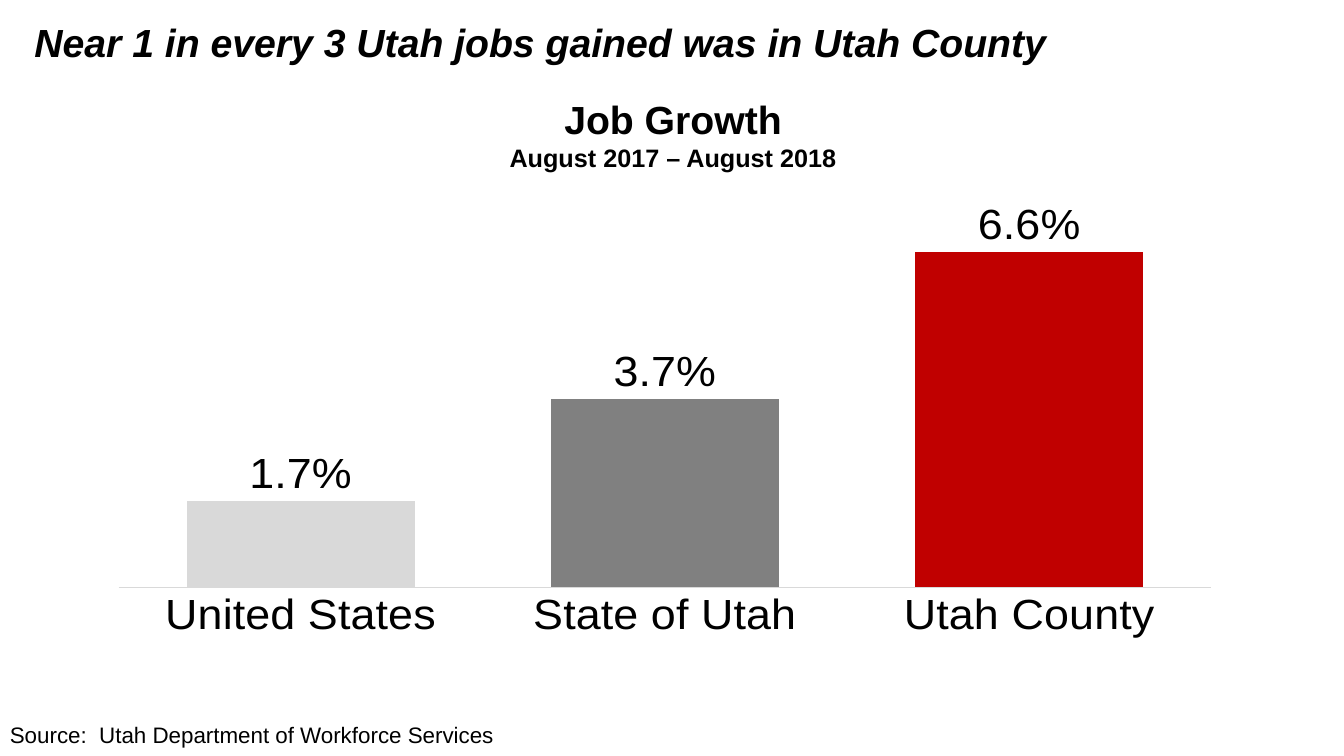
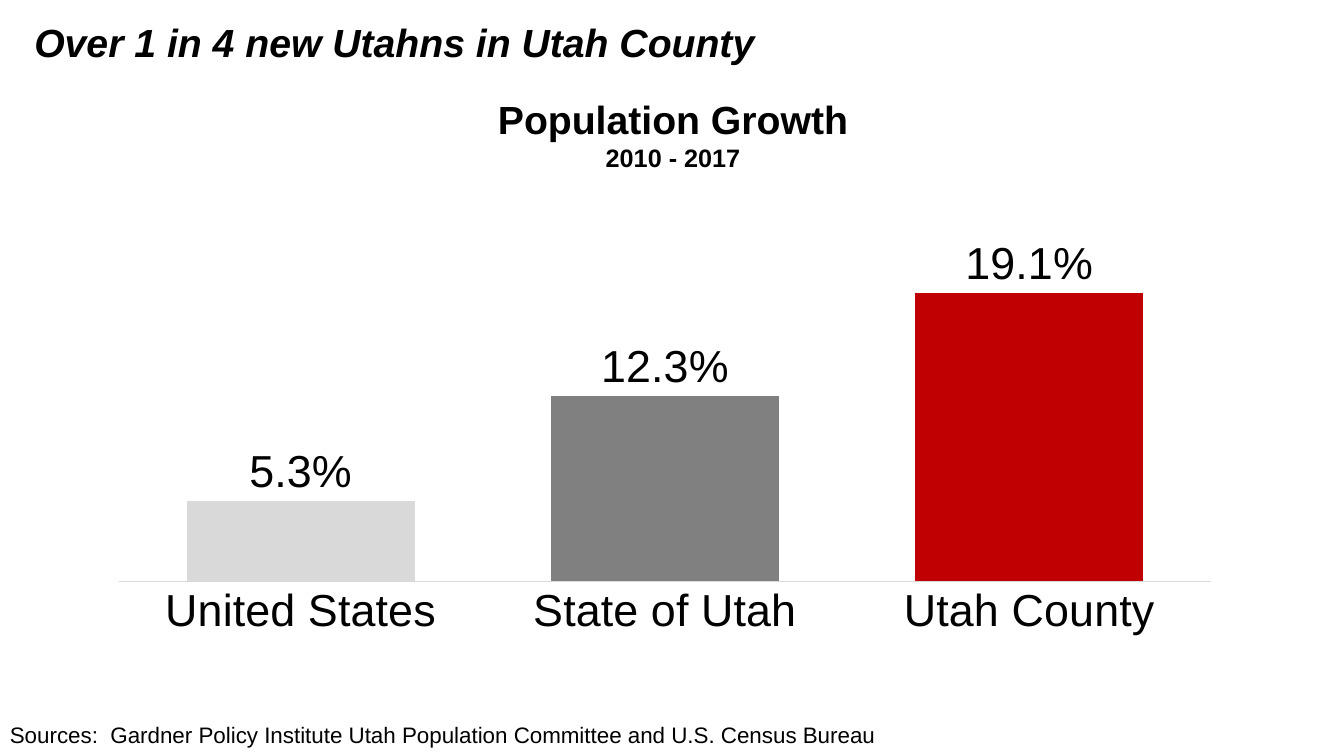
import pptx
import pptx.chart.data
import pptx.dml.color
import pptx.enum.chart
import pptx.enum.text
import pptx.oxml
import pptx.oxml.ns
import pptx.util

Inches = pptx.util.Inches
Pt = pptx.util.Pt
RGB = pptx.dml.color.RGBColor
ALIGN = pptx.enum.text.PP_ALIGN
CHART = pptx.enum.chart

BLACK = RGB(0x00, 0x00, 0x00)
LIGHT = RGB(0xD9, 0xD9, 0xD9)
GREY = RGB(0x80, 0x80, 0x80)
RED = RGB(0xC0, 0x00, 0x00)
BLUE = RGB(0x5B, 0x9B, 0xD5)
FONT = "Arial"
AREAS = {"United States": LIGHT, "State of Utah": GREY, "Utah County": RED}
PLOT = {"x": 0.015, "y": 0.006, "w": 0.973, "h": 0.788}

TITLE_BOX = (0.24, 0.18, 11.5, 1.45)
HEAD_BOX = (1.09, 0.9, 11.17, 0.88)
CHART_BOX = (1.01, 1.99, 11.14, 4.76)

SLIDES = [
    {
        "title": "Near 1 in every 3 Utah jobs gained was in Utah County",
        "head": "Job Growth",
        "span": "August 2017 – August 2018",
        "rates": (0.017, 0.037, 0.066),
        "top": 0.07,
        "source": "Source:  Utah Department of Workforce Services",
        "width": 7.64,
    },
    {
        "title": "Over 1 in 4 new Utahns in Utah County",
        "head": "Population Growth",
        "span": "2010 - 2017",
        "rates": (0.053, 0.123, 0.191),
        "top": 0.25,
        "source": "Sources:  Gardner Policy Institute Utah Population Committee"
                  " and U.S. Census Bureau",
        "width": 13.03,
    },
]


def style(font, size, **more):
    values = {"name": FONT, "size": Pt(size), **more}
    for key, value in values.items():
        setattr(font, key, value)
    font.color.rgb = BLACK


def write(frame, lines, align=ALIGN.LEFT, **more):
    """Fill a text frame with one paragraph for each (text, size) pair."""
    frame.word_wrap = True
    frame.vertical_anchor = pptx.enum.text.MSO_ANCHOR.TOP
    for i, (text, size) in enumerate(lines):
        para = frame.add_paragraph() if i else frame.paragraphs[0]
        para.alignment = align
        run = para.add_run()
        run.text = text
        style(run.font, size, **more)


def add_title(slide, box, text):
    title = slide.shapes.title
    for key, value in zip(("left", "top", "width", "height"), box):
        setattr(title, key, Inches(value))
    write(title.text_frame, [(text, 28)], bold=True, italic=True)
    title.text_frame.auto_size = pptx.enum.text.MSO_AUTO_SIZE.NONE
    title.text_frame.paragraphs[0].line_spacing = 0.9


def add_text(slide, box, lines, **more):
    shape = slide.shapes.add_textbox(*map(Inches, box))
    write(shape.text_frame, lines, **more)
    shape.text_frame.auto_size = pptx.enum.text.MSO_AUTO_SIZE.SHAPE_TO_FIT_TEXT


def set_plot(chart):
    """Pin the inner plot area to fixed shares of the chart."""
    area = chart._chartSpace.chart.plotArea
    for old in area.findall(pptx.oxml.ns.qn("c:layout")):
        area.remove(old)
    modes = "".join(f'<c:{k}Mode val="edge"/>' for k in "xy")
    sizes = "".join(f'<c:{k} val="{v}"/>' for k, v in PLOT.items())
    area.insert(0, pptx.oxml.parse_xml(
        f'<c:layout {pptx.oxml.ns.nsdecls("c")}><c:manualLayout>'
        f'<c:layoutTarget val="inner"/>{modes}{sizes}'
        '</c:manualLayout></c:layout>'))


def add_bars(slide, box, rates, top):
    data = pptx.chart.data.CategoryChartData(number_format="0.0%")
    data.categories = list(AREAS)
    data.add_series("Series 1", rates)
    chart = slide.shapes.add_chart(
        CHART.XL_CHART_TYPE.COLUMN_CLUSTERED, *map(Inches, box), data).chart
    chart.has_title = False
    chart.has_legend = False
    style(chart.font, 32)
    set_plot(chart)

    rate = chart.value_axis
    for key, value in {"minimum_scale": 0, "maximum_scale": top,
                       "has_major_gridlines": False, "visible": False}.items():
        setattr(rate, key, value)
    rate.tick_labels.number_format = "0.0%"
    rate.tick_labels.number_format_is_linked = False

    base = chart.category_axis
    base.major_tick_mark = CHART.XL_TICK_MARK.NONE
    base.format.line.color.rgb = LIGHT
    base.format.line.width = Pt(0.75)
    style(base.tick_labels.font, 32)

    plot = chart.plots[0]
    for key, value in {"gap_width": 60, "overlap": -27,
                       "vary_by_categories": False,
                       "has_data_labels": True}.items():
        setattr(plot, key, value)
    labels = plot.data_labels
    for key, value in {"show_value": True, "number_format": "0.0%",
                       "number_format_is_linked": False,
                       "position": CHART.XL_LABEL_POSITION.OUTSIDE_END}.items():
        setattr(labels, key, value)
    style(labels.font, 32)

    bars = plot.series[0]
    bars.format.fill.solid()
    bars.format.fill.fore_color.rgb = BLUE
    for i, color in enumerate(AREAS.values()):
        fill = bars.points[i].format.fill
        fill.solid()
        fill.fore_color.rgb = color


def add_growth(deck, facts):
    slide = deck.slides.add_slide(deck.slide_layouts[5])
    add_title(slide, TITLE_BOX, facts["title"])
    add_bars(slide, CHART_BOX, facts["rates"], facts["top"])
    add_text(slide, HEAD_BOX, [(facts["head"], 28), (facts["span"], 18)],
             align=ALIGN.CENTER, bold=True)
    add_text(slide, (0, 7.11, facts["width"], 0.37), [(facts["source"], 16)])


def main():
    deck = pptx.Presentation()
    deck.slide_width = Inches(13.33)
    deck.slide_height = Inches(7.5)
    for facts in SLIDES:
        add_growth(deck, facts)
    deck.save("out.pptx")


if __name__ == "__main__":
    main()
